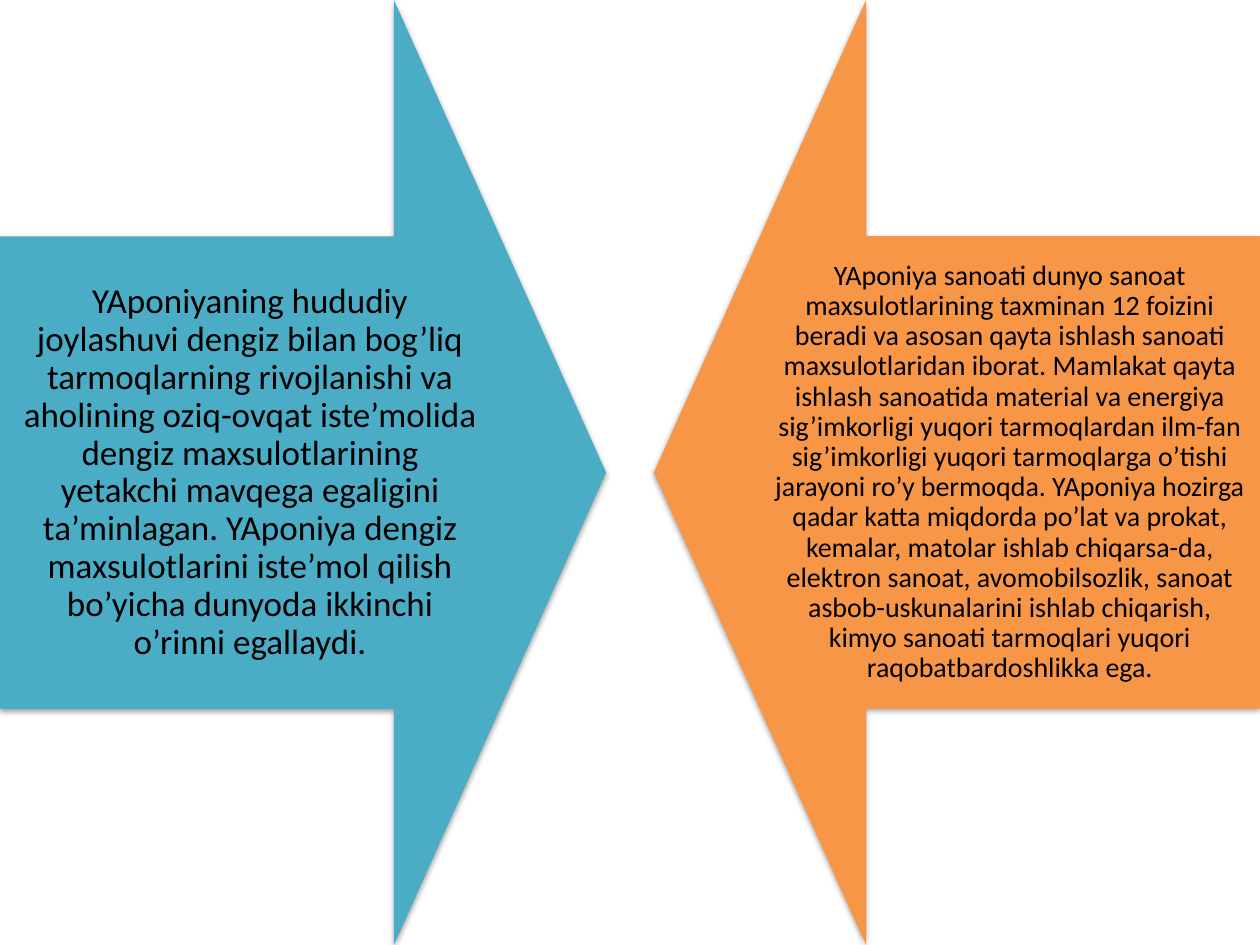
"""Build a slide with two opposing arrows describing Japan's economy."""
from dataclasses import dataclass

from lxml import etree
from pptx import Presentation
from pptx.dml.color import RGBColor
from pptx.enum.shapes import MSO_SHAPE
from pptx.enum.text import MSO_ANCHOR, PP_ALIGN
from pptx.oxml import parse_xml
from pptx.util import Inches, Pt

DOWN_ARROW = MSO_SHAPE.DOWN_ARROW
MIDDLE = MSO_ANCHOR.MIDDLE
CENTER = PP_ALIGN.CENTER

SLIDE_WIDTH, SLIDE_HEIGHT = 10, 7.5
ARROW_LENGTH = 4.81
TEXT_WIDTH, TEXT_HEIGHT = 3.97, SLIDE_HEIGHT / 2
SHADOW = (
    '<a:effectLst xmlns:a="http://schemas.openxmlformats.org/drawingml/2006/main">'
    '<a:outerShdw blurRad="40000" dist="20000" dir="5400000" rotWithShape="0">'
    '<a:srgbClr val="000000"><a:alpha val="38000"/></a:srgbClr>'
    "</a:outerShdw></a:effectLst>"
)


@dataclass
class Argument:
    """One arrow with its statement."""

    statement: str
    color: str
    rotation: int
    arrow_center: float
    text_left: float
    font_size: int
    inset: float


ARGUMENTS = [
    Argument(
        "YAponiyaning hududiy joylashuvi dengiz bilan bog’liq tarmoqlarning "
        "rivojlanishi va aholining oziq-ovqat iste’molida dengiz maxsulotlarining "
        "yetakchi mavqega egaligini ta’minlagan. YAponiya dengiz maxsulotlarini "
        "iste’mol qilish bo’yicha dunyoda ikkinchi o’rinni egallaydi.",
        "4BACC6", 270, ARROW_LENGTH / 2, 0, 20, 0.16,
    ),
    Argument(
        "YAponiya sanoati dunyo sanoat maxsulotlarining taxminan 12 foizini beradi "
        "va asosan qayta ishlash sanoati maxsulotlaridan iborat. Mamlakat qayta "
        "ishlash sanoatida material va energiya sig’imkorligi yuqori tarmoqlardan "
        "ilm-fan sig’imkorligi yuqori tarmoqlarga o’tishi jarayoni ro’y bermoqda. "
        "YAponiya hozirga qadar katta miqdorda po’lat va prokat, kemalar, matolar "
        "ishlab chiqarsa-da, elektron sanoat, avomobilsozlik, sanoat "
        "asbob-uskunalarini ishlab chiqarish, kimyo sanoati tarmoqlari yuqori "
        "raqobatbardoshlikka ega.",
        "F79646", 90, SLIDE_WIDTH - ARROW_LENGTH / 2, SLIDE_WIDTH - TEXT_WIDTH, 16, 0.12,
    ),
]


def rgb(value: str) -> RGBColor:
    """Turn a hex string into a colour."""
    return RGBColor.from_string(value)


def draw_arrow(shapes, argument: Argument) -> None:
    """Draw the rotated arrow with a soft shadow."""
    arrow = shapes.add_shape(
        DOWN_ARROW,
        Inches(argument.arrow_center - SLIDE_HEIGHT / 2),
        Inches((SLIDE_HEIGHT - ARROW_LENGTH) / 2),
        Inches(SLIDE_HEIGHT),
        Inches(ARROW_LENGTH),
    )
    arrow.rotation = argument.rotation
    arrow.adjustments[0] = 0.5
    arrow.adjustments[1] = 0.35
    arrow.fill.solid()
    arrow.fill.fore_color.rgb = rgb(argument.color)
    arrow.line.fill.background()
    arrow.shadow.inherit = False
    properties = arrow.fill._xPr
    for effects in properties.findall("{*}effectLst"):
        properties.replace(effects, parse_xml(etree.tostring(etree.fromstring(SHADOW))))


def draw_statement(shapes, argument: Argument) -> None:
    """Write the statement over the arrow's shaft."""
    statement = shapes.add_textbox(
        Inches(argument.text_left),
        Inches((SLIDE_HEIGHT - TEXT_HEIGHT) / 2),
        Inches(TEXT_WIDTH),
        Inches(TEXT_HEIGHT),
    )
    frame = statement.text_frame
    frame.word_wrap = True
    frame.vertical_anchor = MIDDLE
    frame.margin_left = frame.margin_right = Inches(argument.inset)
    frame.margin_top = frame.margin_bottom = Inches(argument.inset)
    frame.text = argument.statement
    paragraph = frame.paragraphs[0]
    paragraph.alignment = CENTER
    paragraph.line_spacing = 0.9
    font = paragraph.runs[0].font
    font.name = "Calibri"
    font.size = Pt(argument.font_size)
    font.color.rgb = rgb("000000")


def main() -> None:
    """Build and save the slide."""
    presentation = Presentation()
    presentation.slide_width = Inches(SLIDE_WIDTH)
    presentation.slide_height = Inches(SLIDE_HEIGHT)
    slide = presentation.slides.add_slide(presentation.slide_layouts[6])
    for argument in ARGUMENTS:
        draw_arrow(slide.shapes, argument)
        draw_statement(slide.shapes, argument)
    presentation.save("out.pptx")


if __name__ == "__main__":
    main()
